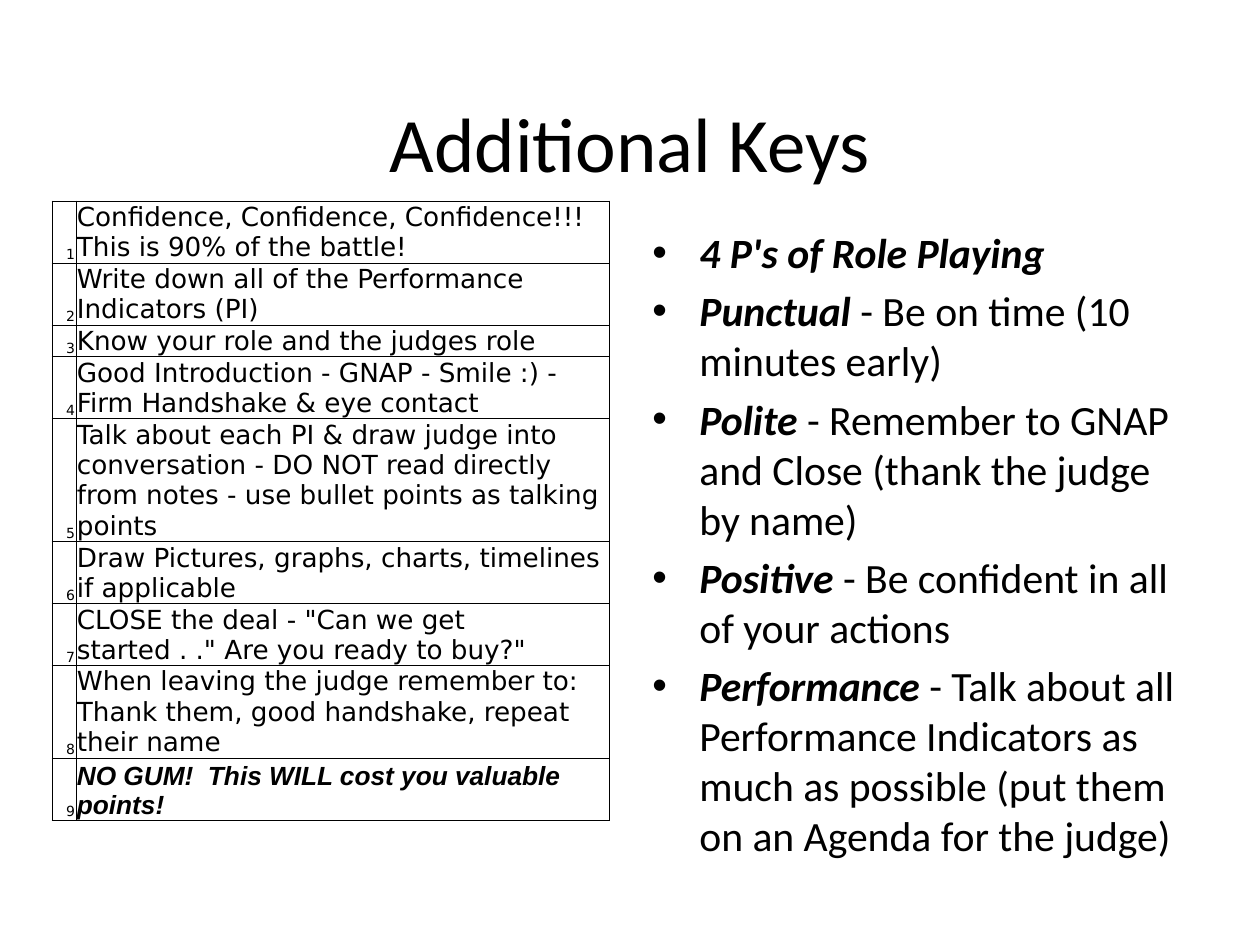
import pptx
import pptx.dml.color
import pptx.enum.text
import pptx.oxml.ns
import pptx.util
from lxml import etree

Cm = pptx.util.Cm
Pt = pptx.util.Pt
ALIGN = pptx.enum.text.PP_ALIGN
ANCHOR = pptx.enum.text.MSO_ANCHOR
INK = "000000"

# Each key with the number of lines it fills
KEYS = [
    ("Confidence, Confidence, Confidence!!! This is 90% of the battle!", 2),
    ("Write down all of the Performance Indicators (PI)", 2),
    ("Know your role and the judges role", 1),
    ("Good Introduction - GNAP - Smile :) - Firm Handshake & eye contact", 2),
    ("Talk about each PI & draw judge into conversation - DO NOT read directly "
     "from notes - use bullet points as talking points", 4),
    ("Draw Pictures, graphs, charts, timelines if applicable", 2),
    ('CLOSE the deal - "Can we get started . ." Are you ready to buy?"', 2),
    ("When leaving the judge remember to: Thank them, good handshake, "
     "repeat their name", 3),
    ("NO GUM!  This WILL cost you valuable points!", 2),
]
FOUR_PS = [
    ("4 P's of Role Playing", ""),
    ("Punctual", " - Be on time (10 minutes early)"),
    ("Polite", " - Remember to GNAP and Close (thank the judge by name)"),
    ("Positive", " - Be confident in all of your actions"),
    ("Performance", " - Talk about all Performance Indicators as much as possible "
     "(put them on an Agenda for the judge)"),
]


def color(hex_string):
    return pptx.dml.color.RGBColor.from_string(hex_string)


def format_font(font, name, size, strong=False):
    font.name = name
    font.size = Pt(size)
    font.bold = font.italic = strong
    font.color.rgb = color(INK)


def add_element(parent, tag, **attributes):
    return etree.SubElement(parent, pptx.oxml.ns.qn(tag), attributes)


def set_borders(cell, sides):
    """Draw thin lines on the named sides (L, R, T, B) and none on the others."""
    properties = cell._tc.get_or_add_tcPr()
    for side in "LRTB":
        line = add_element(properties, f"a:ln{side}", w=str(Pt(0.5)))
        if side in sides:
            fill = add_element(line, "a:solidFill")
            add_element(fill, "a:srgbClr", val=INK)
        else:
            add_element(line, "a:noFill")


def place_title(page, left, top, width, height):
    title = page.shapes.title
    title.left, title.top, title.width, title.height = left, top, width, height
    title.text_frame.text = "Additional Keys"
    title.text_frame.vertical_anchor = ANCHOR.MIDDLE
    para = title.text_frame.paragraphs[0]
    para.alignment = ALIGN.CENTER
    format_font(para.runs[0].font, "Calibri", 44)


def fill_cell(cell, text, alignment, name, size, strong=False):
    cell.text = text
    para = cell.text_frame.paragraphs[0]
    para.alignment = alignment
    format_font(para.runs[0].font, name, size, strong)


def place_keys(page, left, top, width, height):
    """Numbered table of keys, closed by an empty row without sides."""
    row_count = len(KEYS) + 1
    table = page.shapes.add_table(row_count, 3, left, top, width, height).table
    table.first_row = table.horz_banding = False
    number_width, indent_width = Cm(0.48), Cm(1.93)
    widths = [number_width, indent_width, width - number_width - indent_width]
    for column, column_width in zip(table.columns, widths):
        column.width = column_width

    for index, row in enumerate(table.rows):
        is_key = index < len(KEYS)
        for cell in row.cells:
            cell.margin_left = cell.margin_right = cell.margin_top = Cm(0.02)
            cell.margin_bottom = 0
            cell.vertical_anchor = ANCHOR.BOTTOM
            set_borders(cell, "LRTB" if is_key else "T")
            cell.fill.background()
        if not is_key:
            row.height = Cm(0.85)
            continue
        text, lines = KEYS[index]
        row.height = Cm(0.61 * lines + 0.03)
        number, key = row.cells[0], row.cells[1]
        key.merge(row.cells[2])
        is_last = index == len(KEYS) - 1
        fill_cell(number, str(index + 1), ALIGN.RIGHT, "DejaVu Sans", 8)
        fill_cell(key, text, ALIGN.LEFT, "Arial" if is_last else "DejaVu Sans",
                  15, is_last)


def place_four_ps(page, left, top, width, height):
    box = page.shapes.add_textbox(left, top, width, height)
    frame = box.text_frame
    frame.word_wrap = True
    for index, (term, advice) in enumerate(FOUR_PS):
        para = frame.paragraphs[0] if index == 0 else frame.add_paragraph()
        properties = para._p.get_or_add_pPr()
        properties.set("marL", str(Cm(0.95)))
        properties.set("indent", str(-Cm(0.95)))
        add_element(properties, "a:buFont", typeface="Arial")
        add_element(properties, "a:buChar", char="•")
        if index:
            para.space_before = Pt(4.76)
        for text, strong in ((term, True), (advice, False)):
            if text:
                span = para.add_run()
                span.text = text
                format_font(span.font, "Calibri", 23.8, strong)


def main():
    deck = pptx.Presentation()
    deck.slide_width, deck.slide_height = Cm(25.4), Cm(19.05)
    page = deck.slides.add_slide(deck.slide_layouts[5])
    place_title(page, Cm(1.27), Cm(1.27), Cm(22.86), Cm(3.18))
    place_keys(page, Cm(1.05), Cm(4.05), Cm(11.23), Cm(13.28))
    place_four_ps(page, Cm(12.9), Cm(4.45), Cm(11.23), Cm(12.57))
    deck.save("out.pptx")


if __name__ == "__main__":
    main()
